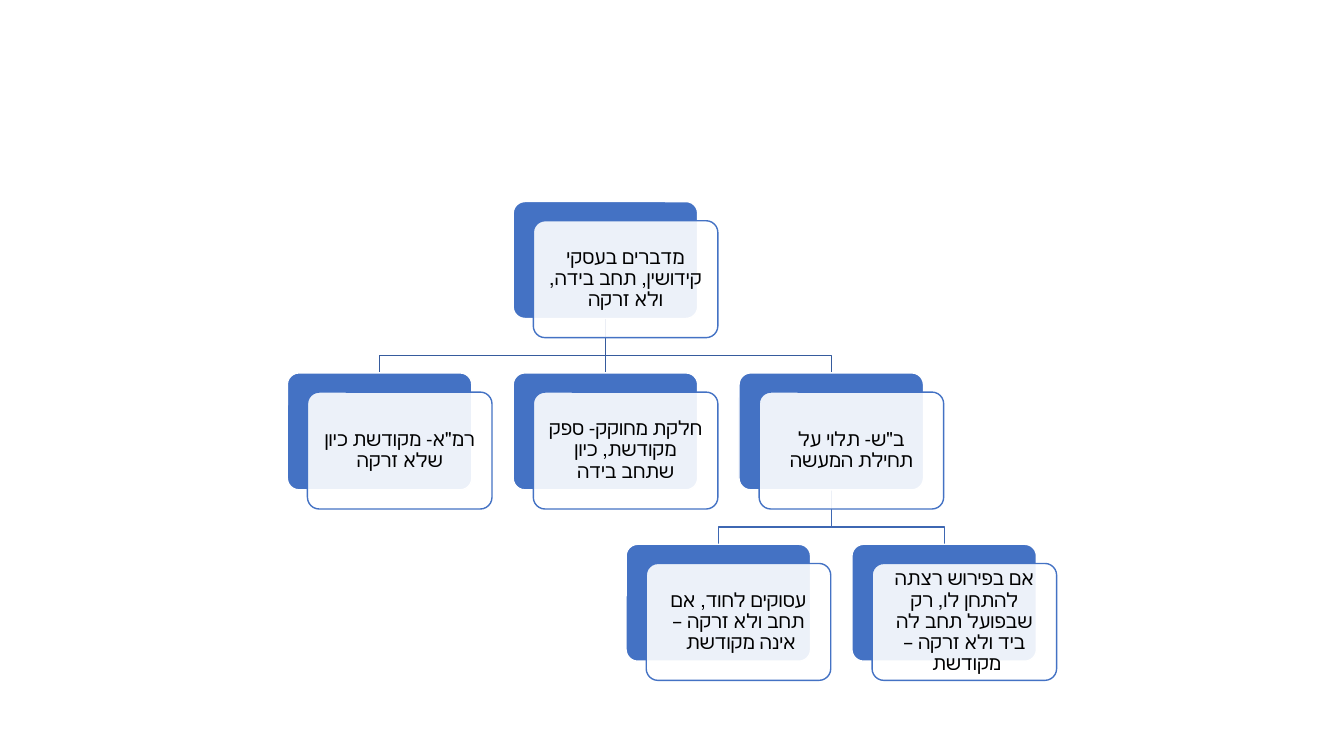
import pptx
import pptx.util
import pptx.dml.color
import pptx.enum.shapes
import pptx.enum.text
import pptx.oxml.ns
from dataclasses import dataclass
from lxml import etree
from pptx.util import Inches


@dataclass(frozen=True)
class Theme:
    card: str = "4472C4"
    paper: str = "FFFFFF"
    text: str = "000000"
    upper_link: str = "365B9D"
    lower_link: str = "3E67B2"
    font: str = "Calibri"
    size: int = 14
    line: int = 1


theme = Theme()
rgb = pptx.dml.color.RGBColor.from_string
qn = pptx.oxml.ns.qn

prs = pptx.Presentation()
prs.slide_width, prs.slide_height = Inches(13.33), Inches(7.5)
s = prs.slides.add_slide(prs.slide_layouts[6])

# Tree geometry: columns are counted from the leftmost card, rows from the top
LEFT, TOP, COL, ROW = 2.85, 2.0, 2.24, 1.7
CARD_W, CARD_H = 1.83, 1.16
SHIFT_X, SHIFT_Y = 0.2, 0.19
ELBOW = 0.37

# Each node: column, row, text
nodes = {
    "root": (1, 0, "מדברים בעסקי קידושין, תחב בידה, ולא זרקה"),
    "rama": (0, 1, "רמ\"א- מקודשת כיון שלא זרקה"),
    "chelkat": (1, 1, "חלקת מחוקק- ספק מקודשת, כיון שתחב בידה"),
    "bash": (2, 1, "ב\"ש- תלוי על תחילת המעשה"),
    "busy": (1.5, 2, "עסוקים לחוד, אם תחב ולא זרקה – אינה מקודשת "),
    "explicit": (2.5, 2, "אם בפירוש רצתה להתחן לו, רק שבפועל תחב לה ביד ולא זרקה – מקודשת "),
}
links = [
    ("bash", "explicit", theme.lower_link),
    ("bash", "busy", theme.lower_link),
    ("root", "bash", theme.upper_link),
    ("root", "chelkat", theme.upper_link),
    ("root", "rama", theme.upper_link),
]

# Links from the bottom of a parent to the top of a child
for parent, child, color in links:
    x1, x2 = (Inches(LEFT + COL * nodes[n][0] + CARD_W / 2) for n in (parent, child))
    y1 = Inches(TOP + ROW * nodes[parent][1] + CARD_H)
    y2 = Inches(TOP + ROW * nodes[child][1])
    if x1 == x2:
        sp = s.shapes.add_connector(pptx.enum.shapes.MSO_CONNECTOR.STRAIGHT, x1, y1, x2, y2)
        etree.SubElement(sp._element.spPr, qn("a:effectLst"))
    else:
        bend = y1 + Inches(ELBOW)
        fb = s.shapes.build_freeform(x1, y1)
        fb.add_line_segments([(x1, bend), (x2, bend), (x2, y2)], close=False)
        sp = fb.convert_to_shape()
        sp.fill.background()
        sp.shadow.inherit = False
    sp.line.color.rgb = rgb(color)
    sp.line.width = pptx.util.Pt(theme.line)

# Cards: a solid back plate and a translucent front plate with the text
for col, row, text in nodes.values():
    x, y = LEFT + COL * col, TOP + ROW * row
    for dx, dy, fill, line in [(0, 0, theme.card, theme.paper),
                               (SHIFT_X, SHIFT_Y, theme.paper, theme.card)]:
        sp = s.shapes.add_shape(pptx.enum.shapes.MSO_SHAPE.ROUNDED_RECTANGLE,
                                Inches(x + dx), Inches(y + dy), Inches(CARD_W), Inches(CARD_H))
        sp.adjustments[0] = 0.1
        sp.shadow.inherit = False
        sp.fill.solid()
        sp.fill.fore_color.rgb = rgb(fill)
        sp.line.color.rgb = rgb(line)
        sp.line.width = pptx.util.Pt(theme.line)

    # The last plate is the front one
    front_color = sp._element.spPr.find(qn("a:solidFill")).find(qn("a:srgbClr"))
    etree.SubElement(front_color, qn("a:alpha"), val="90000")
    tf = sp.text_frame
    tf.word_wrap = True
    tf.vertical_anchor = pptx.enum.text.MSO_ANCHOR.MIDDLE
    tf.margin_left = tf.margin_right = tf.margin_top = tf.margin_bottom = Inches(0.09)
    p = tf.paragraphs[0]
    p.alignment = pptx.enum.text.PP_ALIGN.CENTER
    p.line_spacing = 0.9
    p.space_after = pptx.util.Pt(4.9)
    p._p.get_or_add_pPr().set("rtl", "1")
    r = p.add_run()
    r.text = text
    r.font.name = theme.font
    r.font.size = pptx.util.Pt(theme.size)
    r.font.color.rgb = rgb(theme.text)
    r._r.get_or_add_rPr().set("lang", "he-IL")

prs.save("out.pptx")
